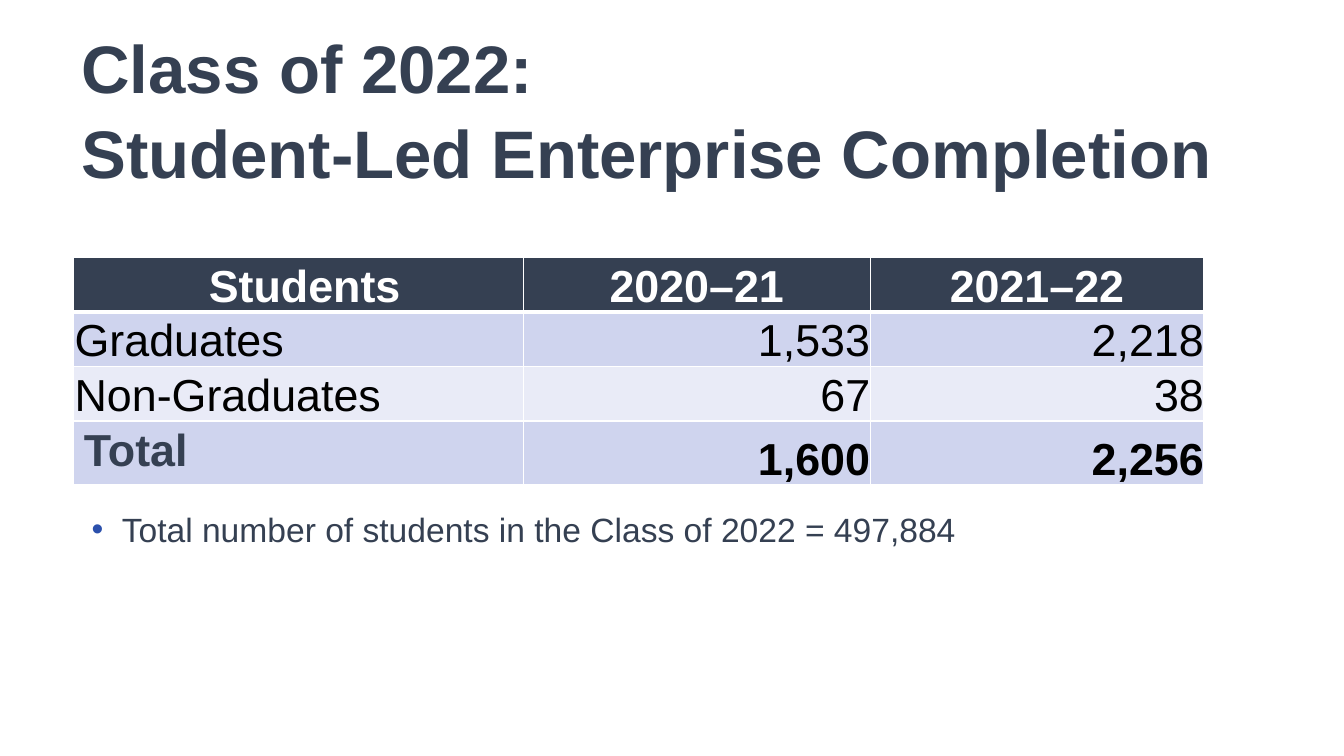
from lxml.etree import SubElement
from pptx import Presentation
from pptx.dml.color import RGBColor
from pptx.enum.text import MSO_ANCHOR, PP_ALIGN
from pptx.oxml.ns import qn
from pptx.util import Cm, Pt

NAVY = RGBColor(0x35, 0x40, 0x52)
WHITE = RGBColor(0xFF, 0xFF, 0xFF)
BLACK = RGBColor(0x00, 0x00, 0x00)
BAND_DARK = RGBColor(0xCF, 0xD4, 0xEE)
BAND_LIGHT = RGBColor(0xE9, 0xEB, 0xF7)
BULLET_BLUE = RGBColor(0x2B, 0x50, 0xAC)

COMPLETION = [
    ("Students", "2020–21", "2021–22"),
    ("Graduates", "1,533", "2,218"),
    ("Non-Graduates", "67", "38"),
    ("Total", "1,600", "2,256"),
]
COLUMN_WIDTHS = [Cm(11.33), Cm(8.74), Cm(8.41)]
ROW_HEIGHTS = [Cm(1.28), Cm(1.28), Cm(1.28), Cm(1.52)]


def apply_format(target, values):
    for name, value in values.items():
        setattr(target, name, value)


def write(paragraph, text, size, color, bold=False):
    span = paragraph.add_run()
    span.text = text
    apply_format(span.font, {"name": "Arial", "size": Pt(size), "bold": bold})
    span.font.color.rgb = color


def add_text_box(page, left, top, width, height, anchor):
    box = page.shapes.add_textbox(left, top, width, height)
    apply_format(box.text_frame, {"word_wrap": True, "vertical_anchor": anchor})
    return box.text_frame.paragraphs[0]


def add_title(page, lines):
    paragraph = add_text_box(page, Cm(1.8), Cm(0.84), Cm(31.47), Cm(3.71),
                             MSO_ANCHOR.MIDDLE)
    paragraph.line_spacing = 1.05
    for index, line in enumerate(lines):
        if index:
            paragraph.add_line_break()
        write(paragraph, line, 48, NAVY, True)


def add_bullet(page, text):
    paragraph = add_text_box(page, Cm(1.8), Cm(12.7), Cm(29.9), Cm(3.25),
                             MSO_ANCHOR.TOP)
    properties = paragraph._p.get_or_add_pPr()
    properties.set("marL", str(Cm(1.02)))
    properties.set("indent", str(Cm(-0.76)))
    color = SubElement(properties, qn("a:buClr"))
    SubElement(color, qn("a:srgbClr"), val=str(BULLET_BLUE))
    SubElement(properties, qn("a:buFont"), typeface="Arial")
    SubElement(properties, qn("a:buChar"), char="•")
    paragraph.space_after = Pt(6)
    write(paragraph, text, 24, NAVY)


def set_borders(cell, bottom_width):
    # Borders have to stand before the fill in the cell properties
    properties = cell._tc.get_or_add_tcPr()
    widths = {"a:lnL": 1, "a:lnR": 1, "a:lnT": 1, "a:lnB": bottom_width}
    for tag, width in widths.items():
        line = SubElement(properties, qn(tag), w=str(Pt(width)))
        fill = SubElement(line, qn("a:solidFill"))
        SubElement(fill, qn("a:srgbClr"), val=str(WHITE))


def fill_cell(cell, text, row, column):
    is_header = row == 0
    is_total = row == len(COMPLETION) - 1
    is_label = column == 0
    set_borders(cell, 3 if is_header else 1)
    cell.fill.solid()
    cell.fill.fore_color.rgb = (
        NAVY if is_header else BAND_DARK if row % 2 else BAND_LIGHT)

    paragraph = cell.text_frame.paragraphs[0]
    if is_header:
        color, paragraph.alignment = WHITE, PP_ALIGN.CENTER
    else:
        color = NAVY if is_total and is_label else BLACK
        paragraph.alignment = PP_ALIGN.LEFT if is_label else PP_ALIGN.RIGHT
    # The total label keeps the default margins and top anchor
    if not (is_total and is_label):
        edge = Cm(0.02) if is_header or is_label else Cm(0)
        apply_format(cell, {
            "margin_left": Cm(0.33) if is_header and is_label else edge,
            "margin_right": edge,
            "margin_top": edge,
            "margin_bottom": Cm(0),
            "vertical_anchor": MSO_ANCHOR.BOTTOM,
        })
    write(paragraph, text, 32, color, is_header or is_total)


def add_completion_table(page):
    table = page.shapes.add_table(
        len(COMPLETION), len(COLUMN_WIDTHS), Cm(1.86), Cm(6.48),
        sum(COLUMN_WIDTHS), sum(ROW_HEIGHTS)).table
    for column, width in zip(table.columns, COLUMN_WIDTHS):
        column.width = width
    for row, height in zip(table.rows, ROW_HEIGHTS):
        row.height = height
    for row, values in enumerate(COMPLETION):
        for column, text in enumerate(values):
            fill_cell(table.cell(row, column), text, row, column)


def main():
    deck = Presentation()
    deck.slide_width, deck.slide_height = Cm(33.87), Cm(19.05)
    page = deck.slides.add_slide(deck.slide_layouts[6])
    add_title(page, ["Class of 2022:", "Student-Led Enterprise Completion"])
    add_completion_table(page)
    add_bullet(page, "Total number of students in the Class of 2022 = 497,884")
    deck.save("out.pptx")


if __name__ == "__main__":
    main()
